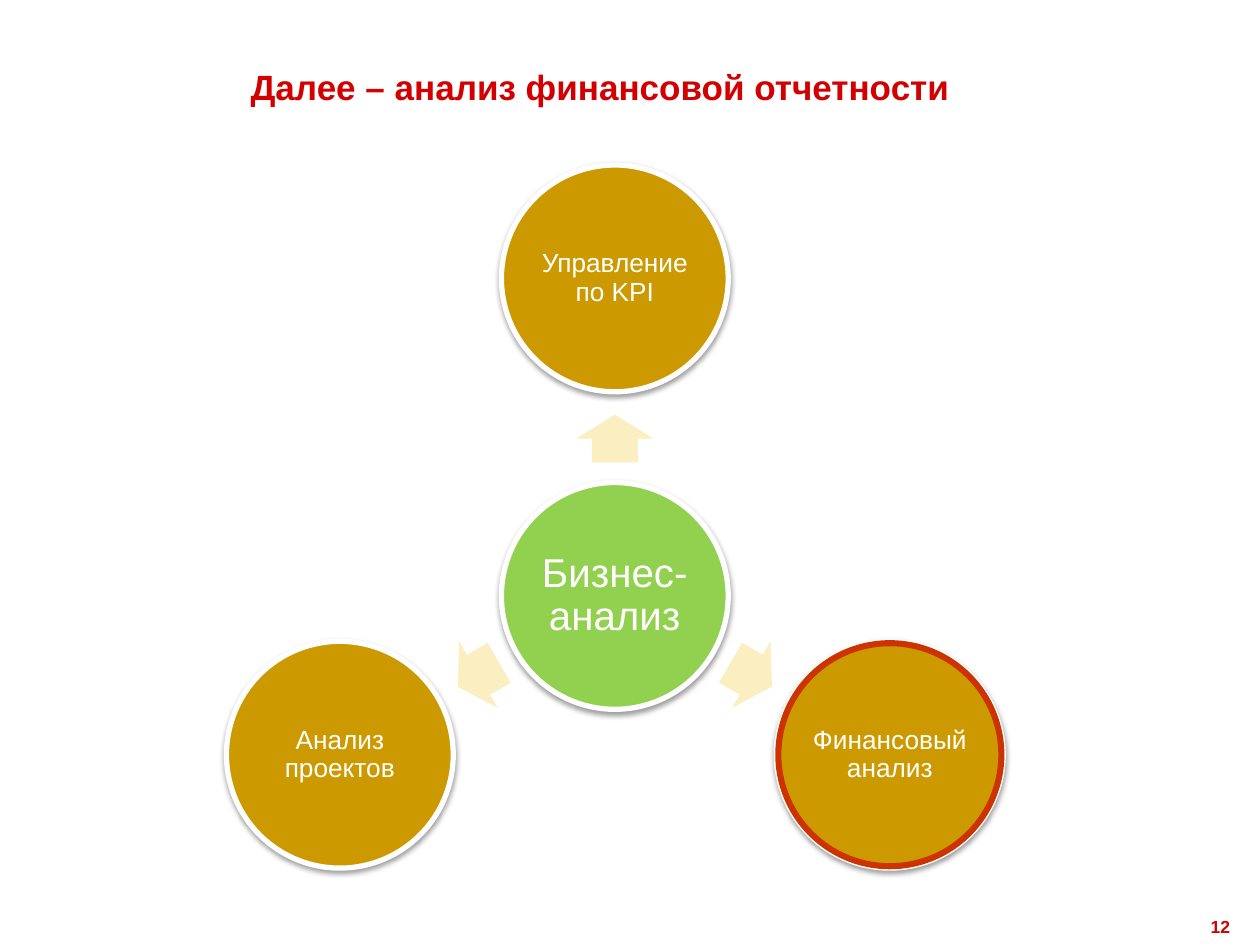
import math
from dataclasses import dataclass

from lxml import etree
from pptx import Presentation
from pptx.dml.color import RGBColor
from pptx.enum import shapes, text
from pptx.oxml import parse_xml
from pptx.oxml.ns import nsdecls
from pptx.util import Inches, Pt

RED = RGBColor(0xD2, 0x00, 0x00)
RING_RED = RGBColor(0xCC, 0x33, 0x00)
GREEN = RGBColor(0x92, 0xD0, 0x50)
GOLD = RGBColor(0xCC, 0x99, 0x00)
CREAM = RGBColor(0xFB, 0xEF, 0xC1)
WHITE = RGBColor(0xFF, 0xFF, 0xFF)

FONT = "Arial"
HUB_X, HUB_Y = 4.88, 4.73
NODE_RADIUS, ARROW_RADIUS = 2.52, 1.25
DIAMETER, RING_DIAMETER = 1.8, 1.77
ARROW_W, ARROW_H = 0.38, 0.61


@dataclass(frozen=True)
class Node:
    label: str
    angle: int  # clockwise degrees from the right of the hub
    highlighted: bool = False


NODES = [
    Node("Управление по KPI", 270),
    Node("Финансовый анализ", 30, highlighted=True),
    Node("Анализ проектов", 150),
]


def polar(radius: float, angle: int) -> tuple[float, float]:
    a = math.radians(angle)
    return HUB_X + radius * math.cos(a), HUB_Y + radius * math.sin(a)


def add_centred(s, kind, x: float, y: float, w: float, h: float):
    """Add a preset shape by its centre point."""
    sp = s.shapes.add_shape(
        kind, Inches(x - w / 2), Inches(y - h / 2), Inches(w), Inches(h))
    sp.shadow.inherit = False
    return sp


def add_soft_shadow(sp) -> None:
    effects = sp._element.spPr.find(
        "{http://schemas.openxmlformats.org/drawingml/2006/main}effectLst")
    effects.append(parse_xml(
        f'<a:outerShdw {nsdecls("a")} blurRad="{Pt(3.1)}" dist="{Pt(1.6)}" '
        'dir="5400000" rotWithShape="0"><a:srgbClr val="000000">'
        '<a:alpha val="38000"/></a:srgbClr></a:outerShdw>'))


def add_circle(s, label: str, x: float, y: float, fill: RGBColor, size: int) -> None:
    sp = add_centred(s, shapes.MSO_SHAPE.OVAL, x, y, DIAMETER, DIAMETER)
    sp.fill.solid()
    sp.fill.fore_color.rgb = fill
    sp.line.color.rgb = WHITE
    sp.line.width = Pt(3)
    add_soft_shadow(sp)
    tf = sp.text_frame
    tf.word_wrap = True
    tf.vertical_anchor = text.MSO_ANCHOR.MIDDLE
    tf.margin_left = tf.margin_right = tf.margin_top = tf.margin_bottom = Inches(0.01)
    p = tf.paragraphs[0]
    p.text = label
    p.alignment = text.PP_ALIGN.CENTER
    p.line_spacing = 0.9
    p.font.name, p.font.size = FONT, Pt(size)
    p.font.color.rgb = WHITE


def add_arrow(s, angle: int) -> None:
    sp = add_centred(s, shapes.MSO_SHAPE.RIGHT_ARROW,
                     *polar(ARROW_RADIUS, angle), ARROW_W, ARROW_H)
    sp.rotation = angle
    sp.adjustments[0], sp.adjustments[1] = 0.6, 0.5
    sp.fill.solid()
    sp.fill.fore_color.rgb = CREAM
    sp.line.fill.background()


def add_ring(s, x: float, y: float) -> None:
    sp = add_centred(s, shapes.MSO_SHAPE.OVAL, x, y, RING_DIAMETER, RING_DIAMETER)
    sp.fill.background()
    sp.line.color.rgb = RING_RED
    sp.line.width = Pt(3.5)


def style_red(p, size: int) -> None:
    p.font.name, p.font.size, p.font.bold = FONT, Pt(size), True
    p.font.color.rgb = RED


def add_text(s, content: str, x: float, y: float, w: float, h: float, size: int):
    tf = s.shapes.add_textbox(Inches(x), Inches(y), Inches(w), Inches(h)).text_frame
    tf.word_wrap = True
    p = tf.paragraphs[0]
    p.text = content
    style_red(p, size)
    return tf


def main() -> None:
    prs = Presentation()
    prs.slide_width, prs.slide_height = Inches(10), Inches(7.5)
    s = prs.slides.add_slide(prs.slide_layouts[6])

    title = add_text(s, "Далее – анализ финансовой отчетности",
                     1.89, 0.13, 7.56, 1.18, 20)
    title.vertical_anchor = text.MSO_ANCHOR.MIDDLE
    title.paragraphs[0].line_spacing = 0.8
    number = add_text(s, "12", 9.02, 7.22, 0.84, 0.28, 10)
    number.paragraphs[0].alignment = text.PP_ALIGN.RIGHT

    add_circle(s, "Бизнес-анализ", HUB_X, HUB_Y, GREEN, 23)
    for node in NODES:
        x, y = polar(NODE_RADIUS, node.angle)
        add_arrow(s, node.angle)
        add_circle(s, node.label, x, y, GOLD, 15)
        if node.highlighted:
            add_ring(s, x, y)

    prs.save("out.pptx")


if __name__ == "__main__":
    main()
